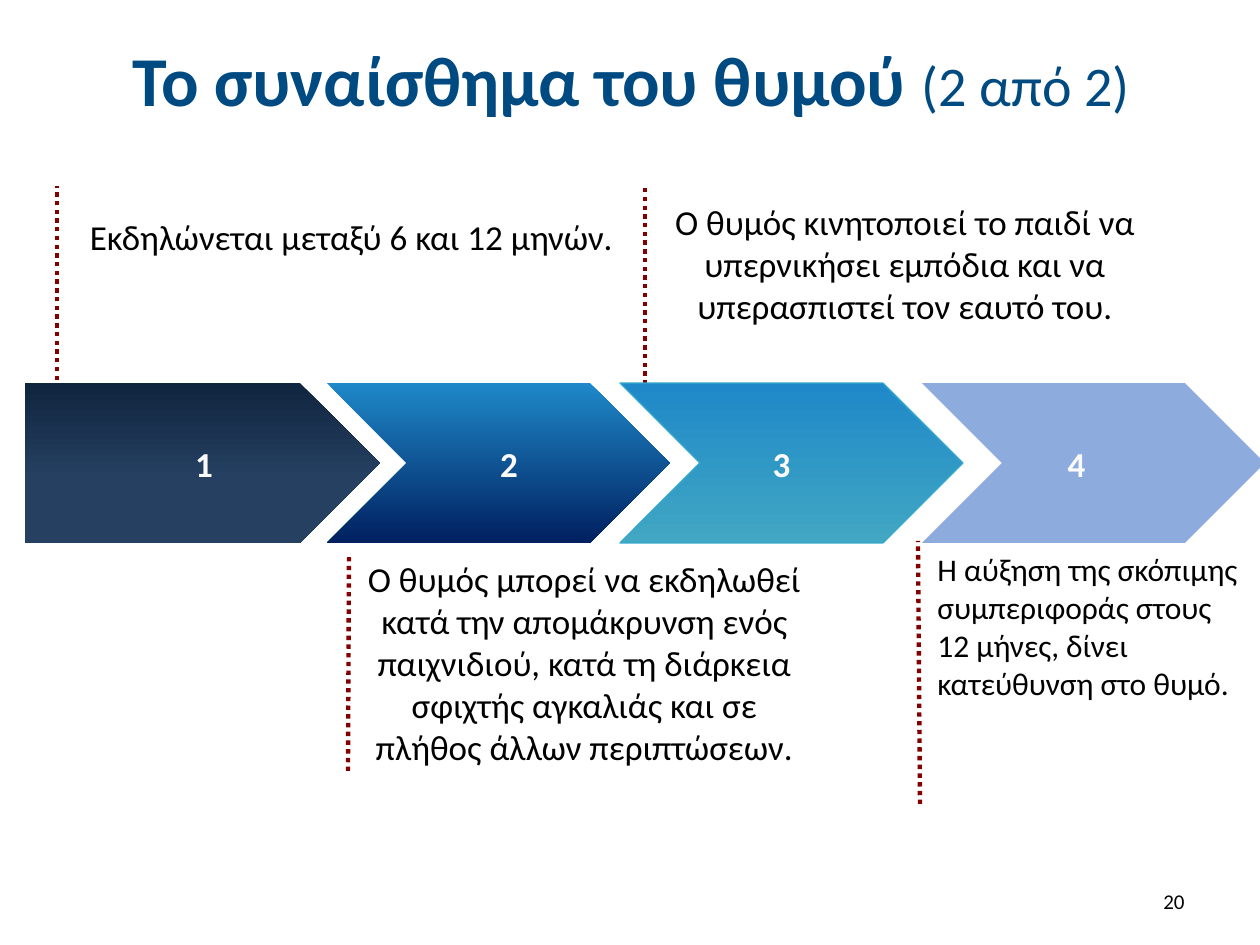
from pptx import Presentation
from pptx.dml.color import RGBColor
from pptx.enum.dml import MSO_LINE_DASH_STYLE as Dash
from pptx.enum.shapes import MSO_CONNECTOR as Conn, MSO_SHAPE as Shape
from pptx.enum.text import MSO_ANCHOR as Anchor, PP_ALIGN as Align
from pptx.oxml.ns import qn
from pptx.util import Pt
from lxml.etree import SubElement

PX = 914400 / 126
FONT = "Calibri"
COLORS = {
    "title": "004A82", "text": "000000", "number": "FBFBFB", "guide": "820000",
    "navy_top": "10253F", "navy": "254061", "blue": "1F88C8", "deep": "002060",
    "teal": "41A7C3", "teal_edge": "34A8CC", "pale": "8EABDE", "pale_end": "8FACE1",
}


def px(*lengths):
    return [round(n * PX) for n in lengths]


def rgb(name):
    return RGBColor.from_string(COLORS[name])


def add_run(p, text, size, color, bold=False):
    r = p.add_run()
    r.text = text
    r.font.name, r.font.size, r.font.bold = FONT, Pt(size), bold
    r.font.color.rgb = rgb(color)


def add_text(s, box, text, size, color="text", align=Align.CENTER, bold=False,
             anchor=Anchor.TOP):
    tf = s.shapes.add_textbox(*px(*box)).text_frame
    tf.word_wrap = True
    tf.vertical_anchor = anchor
    p = tf.paragraphs[0]
    p.alignment = align
    add_run(p, text, size, color, bold)


def add_title(s, box):
    sp = s.shapes.title
    sp.left, sp.top, sp.width, sp.height = px(*box)
    tf = sp.text_frame
    tf.vertical_anchor = Anchor.MIDDLE
    p = tf.paragraphs[0]
    p.alignment = Align.CENTER
    add_run(p, "Το συναίσθημα του θυμού ", 40, "title", True)
    add_run(p, "(2 από 2)", 32, "title")


def add_guide(s, start, end):
    line = s.shapes.add_connector(Conn.STRAIGHT, *px(*start, *end))
    line.line.color.rgb = rgb("guide")
    line.line.width = Pt(2.5)
    line.line.dash_style = Dash.ROUND_DOT
    SubElement(line._element.spPr, qn("a:effectLst"))


def add_arrow(s, box, preset, stops, edge=None):
    sp = s.shapes.add_shape(preset, *px(*box))
    sp.shadow.inherit = False
    sp.fill.gradient()
    sp.fill.gradient_angle = 270
    for stop, (position, color) in zip(sp.fill.gradient_stops, stops):
        stop.position = position
        stop.color.rgb = rgb(color)
    if edge:
        sp.line.color.rgb = rgb(edge)
        sp.line.width = Pt(0.75)
    else:
        sp.line.fill.background()


def add_process(s, box):
    left, top, width, height = box
    step, chevron = 302, 343
    arrows = [
        (0, 355, Shape.PENTAGON, [(0, "navy_top"), (0.59, "navy")], None),
        (595, chevron, Shape.CHEVRON, [(0, "blue"), (1, "teal")], "teal_edge"),
        (step, chevron, Shape.CHEVRON, [(0, "blue"), (1, "deep")], None),
        (width - chevron, chevron, Shape.CHEVRON, [(0.5, "pale"), (1, "pale_end")], None),
    ]
    for x, w, preset, stops, edge in arrows:
        add_arrow(s, (left + x, top, w, height), preset, stops, edge)
    numbers = [(95, 168), (400, 168), (662, 189), (957, 189)]
    for number, (x, w) in enumerate(numbers, 1):
        add_text(s, (left + x, top + 53, w, 55), str(number), 20, "number", bold=True)


def add_notes(s, notes):
    for box, text, size, align in notes:
        add_text(s, box, text, size, align=align)


def main():
    prs = Presentation()
    prs.slide_width, prs.slide_height = px(1260, 945)
    s = prs.slides.add_slide(prs.slide_layouts[5])
    add_title(s, (64, 16, 1134, 125))
    add_text(s, (903, 876, 294, 50), "20", 12, align=Align.RIGHT, anchor=Anchor.MIDDLE)
    for start, end in [((920, 804), (918, 541)), ((645, 402), (645, 184)),
                       ((57, 441), (57, 186)), ((348, 771), (349, 553))]:
        add_guide(s, start, end)
    add_process(s, (25, 383, 1240, 160))
    add_notes(s, [
        ((68, 209, 567, 55), "Εκδηλώνεται μεταξύ 6 και 12 μηνών.", 20, Align.CENTER),
        ((655, 194, 500, 140), "Ο θυμός κινητοποιεί το παιδί να υπερνικήσει εμπόδια "
         "και να υπερασπιστεί τον εαυτό του.", 20, Align.CENTER),
        ((351, 551, 467, 224), "Ο θυμός μπορεί να εκδηλωθεί κατά την απομάκρυνση ενός "
         "παιχνιδιού, κατά τη διάρκεια σφιχτής αγκαλιάς και σε πλήθος άλλων "
         "περιπτώσεων.", 20, Align.CENTER),
        ((925, 544, 335, 165), "Η αύξηση της σκόπιμης συμπεριφοράς στους 12 μήνες, "
         "δίνει κατεύθυνση στο θυμό.", 18, Align.LEFT),
    ])
    prs.save("out.pptx")


if __name__ == "__main__":
    main()
